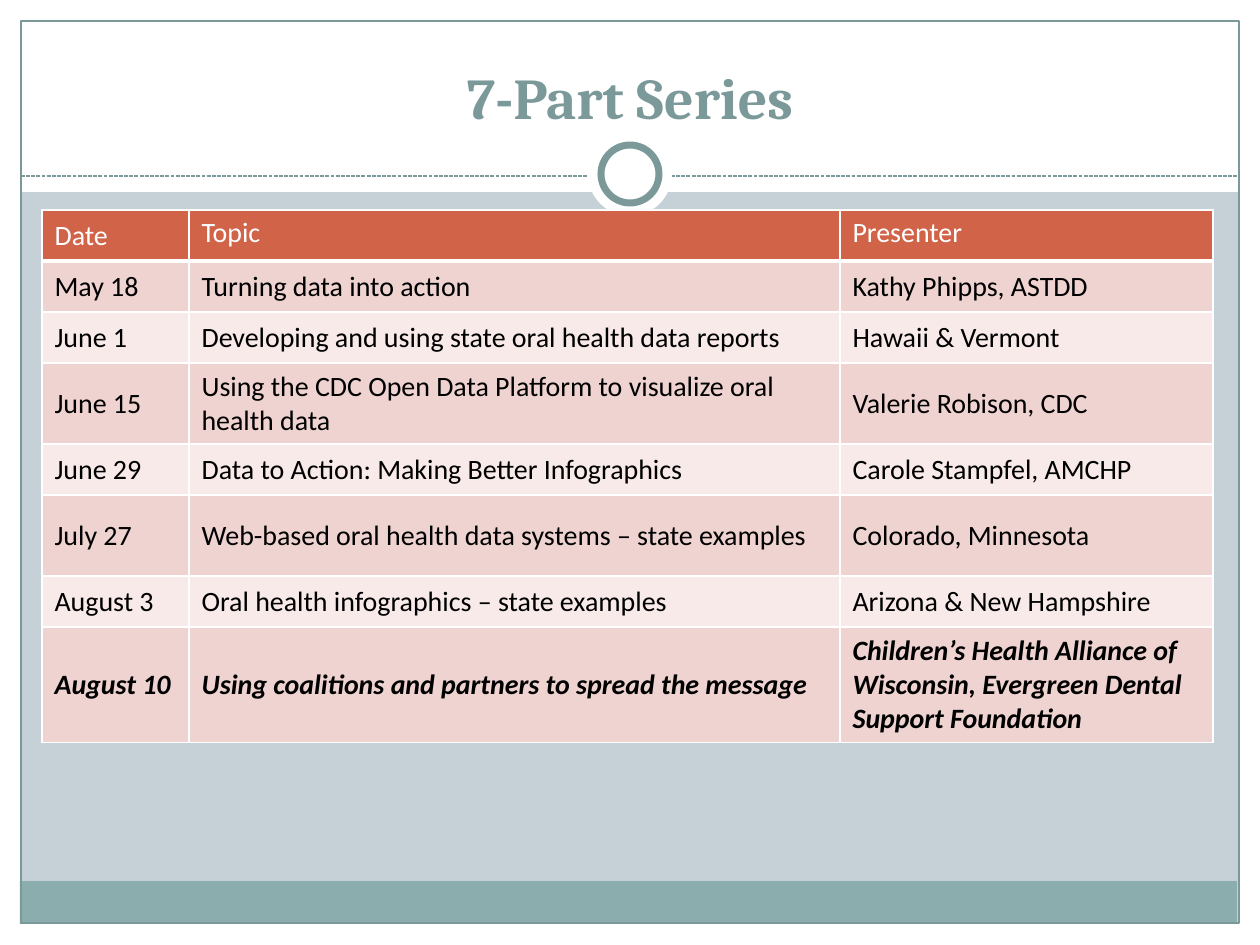
from dataclasses import dataclass
from typing import Optional

from lxml.etree import SubElement
from pptx import Presentation
from pptx.dml.color import RGBColor
from pptx.enum.dml import MSO_LINE
from pptx.enum.shapes import MSO_CONNECTOR, MSO_SHAPE
from pptx.enum.text import MSO_ANCHOR, MSO_AUTO_SIZE, PP_ALIGN
from pptx.oxml import parse_xml
from pptx.oxml.ns import nsdecls, qn
from pptx.util import Emu, Pt

PX = 914400 / 126
COLORS = {
    "background": "C5D1D7",
    "white": "FFFFFF",
    "black": "000000",
    "teal": "7C999A",
    "band": "8CADAE",
    "header": "D16349",
    "odd": "EED3D0",
    "even": "F7EAE9",
}


@dataclass
class Panel:
    left: int
    top: int
    width: int
    height: int
    fill: Optional[str] = "white"
    line_pt: Optional[float] = None
    preset: MSO_SHAPE = MSO_SHAPE.RECTANGLE


@dataclass
class Session:
    date: str
    topic: str
    presenter: str
    height: int = 51
    strong: bool = False


FRAME = [
    Panel(0, 924, 1260, 21),
    Panel(0, 0, 1260, 192),
    Panel(0, 0, 21, 945),
    Panel(1239, 0, 21, 945),
    Panel(20, 881, 1217, 43, "band"),
    Panel(21, 21, 1218, 902, None, 0.75),
]
RINGS = [
    Panel(588, 132, 84, 84, preset=MSO_SHAPE.OVAL),
    Panel(601, 145, 58, 58, line_pt=4, preset=MSO_SHAPE.OVAL),
]
COLUMNS = [147, 651, 373]
SESSIONS = [
    Session("Date", "Topic", "Presenter"),
    Session("May 18", "Turning data into action", "Kathy Phipps, ASTDD"),
    Session("June 1", "Developing and using state oral health data reports", "Hawaii & Vermont"),
    Session("June 15", "Using the CDC Open Data Platform to visualize oral health data",
            "Valerie Robison, CDC", 81),
    Session("June 29", "Data to Action: Making Better Infographics", "Carole Stampfel, AMCHP"),
    Session("July 27", "Web-based oral health data systems – state examples",
            "Colorado, Minnesota", 81),
    Session("August 3", "Oral health infographics – state examples", "Arizona & New Hampshire"),
    Session("August 10", "Using coalitions and partners to spread the message",
            "Children’s Health Alliance of Wisconsin, Evergreen Dental Support Foundation",
            115, True),
]


def px(n: int) -> Emu:
    return Emu(round(n * PX))


def rgb(name: str) -> RGBColor:
    return RGBColor.from_string(COLORS[name])


def write(tf, text: str, *, font: str, size: int, color: str, bold: bool = False,
          italic: bool = False, align: PP_ALIGN = PP_ALIGN.LEFT) -> None:
    p = tf.paragraphs[0]
    p.alignment = align
    r = p.add_run()
    r.text = text
    f = r.font
    f.name, f.size, f.bold, f.italic = font, Pt(size), bold, italic
    f.color.rgb = rgb(color)


def draw_panel(s, panel: Panel) -> None:
    sp = s.shapes.add_shape(panel.preset, px(panel.left), px(panel.top),
                            px(panel.width), px(panel.height))
    sp.shadow.inherit = False
    if panel.fill:
        sp.fill.solid()
        sp.fill.fore_color.rgb = rgb(panel.fill)
    else:
        sp.fill.background()
    if panel.line_pt:
        sp.line.color.rgb = rgb("teal")
        sp.line.width = Pt(panel.line_pt)
    else:
        sp.line.fill.background()


def draw_divider(s) -> None:
    cx = s.shapes.add_connector(MSO_CONNECTOR.STRAIGHT, px(21), px(176), px(1239), px(176))
    cx.line.color.rgb = rgb("teal")
    cx.line.width = Pt(0.75)
    cx.line.dash_style = MSO_LINE.SQUARE_DOT
    SubElement(cx._element.spPr, qn("a:effectLst"))


def draw_title(s, text: str) -> None:
    title = s.shapes.title
    title.left, title.top, title.width, title.height = px(42), px(32), px(1176), px(105)
    tf = title.text_frame
    tf.auto_size = MSO_AUTO_SIZE.NONE
    tf.word_wrap = True
    tf.vertical_anchor = MSO_ANCHOR.BOTTOM
    write(tf, text, font="Cambria", size=33, color="teal", bold=True, align=PP_ALIGN.CENTER)
    s.shapes._spTree.append(title._element)


def set_borders(cell, bottom_pt: int) -> None:
    tc_pr = cell._tc.get_or_add_tcPr()
    for i, (side, width) in enumerate(zip("LRTB", (1, 1, 1, bottom_pt))):
        tc_pr.insert(i, parse_xml(
            f'<a:ln{side} {nsdecls("a")} w="{Pt(width)}"><a:solidFill>'
            f'<a:srgbClr val="{COLORS["white"]}"/></a:solidFill></a:ln{side}>'))


def draw_schedule(s) -> None:
    heights = [session.height for session in SESSIONS]
    table = s.shapes.add_table(len(SESSIONS), len(COLUMNS), px(42), px(210),
                               px(sum(COLUMNS)), px(sum(heights))).table
    for column, width in zip(table.columns, COLUMNS):
        column.width = px(width)
    for i, session in enumerate(SESSIONS):
        header = i == 0
        table.rows[i].height = px(session.height)
        fill = "header" if header else "odd" if i % 2 else "even"
        for j, text in enumerate((session.date, session.topic, session.presenter)):
            cell = table.cell(i, j)
            cell.fill.solid()
            cell.fill.fore_color.rgb = rgb(fill)
            cell.vertical_anchor = MSO_ANCHOR.TOP if header and j else MSO_ANCHOR.MIDDLE
            write(cell.text_frame, text, font="Calibri", size=16,
                  color="white" if header else "black",
                  bold=session.strong, italic=session.strong)
            set_borders(cell, 3 if header else 1)


def main() -> None:
    prs = Presentation()
    prs.slide_width, prs.slide_height = px(1260), px(945)
    s = prs.slides.add_slide(prs.slide_layouts[5])
    s.background.fill.solid()
    s.background.fill.fore_color.rgb = rgb("background")
    for panel in FRAME:
        draw_panel(s, panel)
    draw_divider(s)
    for ring in RINGS:
        draw_panel(s, ring)
    draw_title(s, "7-Part Series")
    draw_schedule(s)
    prs.save("out.pptx")


if __name__ == "__main__":
    main()
